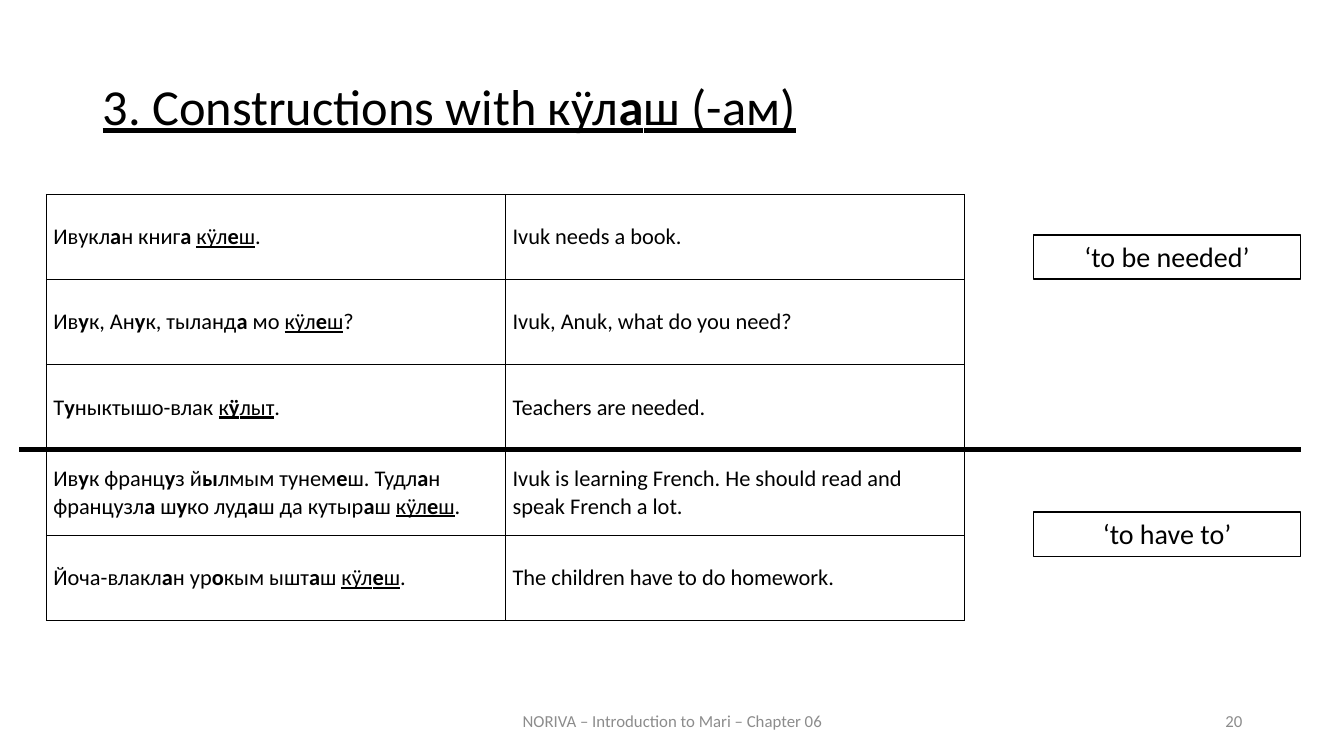
"""Build a slide on Mari constructions with кӱлаш."""
from dataclasses import dataclass

from pptx import Presentation
from pptx import util as u
from pptx.dml import color
from pptx.enum import shapes, text
from pptx.oxml import ns, xmlchemy

FONT = "Calibri"
BLACK, WHITE, GREY = "000000", "FFFFFF", "8C8C8C"
TABLE_LEFT, TABLE_WIDTH, TABLE_TOP = 0.46, 9.11, 1.93
ROW_HEIGHT = 1.69 / 2
LEFT, CENTER = text.PP_ALIGN.LEFT, text.PP_ALIGN.CENTER
RIGHT, JUSTIFY = text.PP_ALIGN.RIGHT, text.PP_ALIGN.JUSTIFY


@dataclass
class ExampleTable:
    first_row: int
    align: text.PP_ALIGN
    rows: list[tuple[str, str]]


@dataclass
class Label:
    wording: str
    top: float


@dataclass
class Footer:
    wording: str
    left: float
    width: float
    align: text.PP_ALIGN


EXAMPLES = [
    ExampleTable(0, JUSTIFY, [
        ("Ивукл*а*н книг*а *_кӱл*е*ш_.", "Ivuk needs a book."),
        ("Ив*у*к, Ан*у*к, тыланд*а* мо _кӱл*е*ш_?", "Ivuk, Anuk, what do you need?"),
    ]),
    ExampleTable(2, JUSTIFY, [
        ("Т*у*ныктышо-влак _к*ӱ*лыт_.", "Teachers are needed."),
    ]),
    ExampleTable(3, LEFT, [
        ("Ив*у*к франц*у*з й*ы*лмым тунем*е*ш. Тудл*а*н французл*а *ш*у*ко "
         "луд*а*ш да кутыр*а*ш _кӱл*е*ш_.",
         "Ivuk is learning French. He should read and speak French a lot."),
        ("Йоча-влакл*а*н ур*о*кым ышт*а*ш _кӱл*е*ш_.", "The children have to do homework."),
    ]),
]
LABELS = [Label("‘to be needed’", 2.33), Label("‘to have to’", 5.08)]
FOOTERS = [
    Footer("NORIVA – Introduction to Mari – Chapter 06", 4.42, 4.5, CENTER),
    Footer("20", 9.42, 3, RIGHT),
]


def rgb(value: str) -> color.RGBColor:
    """Turn a hex string into a colour."""
    return color.RGBColor.from_string(value)


def write(frame, marked: str, *, size: float, align: text.PP_ALIGN, ink: str = BLACK):
    """Write one paragraph in which * toggles bold and _ toggles underline."""
    frame.word_wrap = True
    paragraph = frame.paragraphs[0]
    paragraph.alignment = align
    for line_index, underlined in enumerate(marked.split("_")):
        for bold_index, piece in enumerate(underlined.split("*")):
            if piece:
                run = paragraph.add_run()
                run.text = piece
                run.font.name, run.font.size = FONT, u.Pt(size)
                run.font.bold = bold_index % 2 == 1
                run.font.underline = line_index % 2 == 1
                run.font.color.rgb = rgb(ink)
    return paragraph


def add_text_box(slide, left: float, top: float, width: float, height: float):
    """Add an empty text box and return its text frame."""
    box = slide.shapes.add_textbox(*map(u.Inches, (left, top, width, height)))
    return box.text_frame


def add_title(slide) -> None:
    """Add the underlined heading."""
    frame = add_text_box(slide, 0.92, 0.76, 11.5, 5.98)
    paragraph = write(frame, "_3. Constructions with кӱл*а*ш (-ам)_", size=36, align=JUSTIFY)
    paragraph.line_spacing = 0.9
    paragraph.space_before = u.Pt(12)


def add_footer(slide, footer: Footer) -> None:
    """Add one grey text at the foot of the slide."""
    frame = add_text_box(slide, footer.left, 6.95, footer.width, 0.4)
    frame.vertical_anchor = text.MSO_ANCHOR.MIDDLE
    write(frame, footer.wording, size=12, align=footer.align, ink=GREY)


def style_cell(cell) -> None:
    """Give a cell thin black borders, no fill and narrow margins."""
    cell.vertical_anchor = text.MSO_ANCHOR.MIDDLE
    cell.margin_left = cell.margin_right = u.Inches(0.07)
    cell.margin_top = cell.margin_bottom = 0
    properties = cell._tc.get_or_add_tcPr()
    for side in "LRTB":
        border = xmlchemy.OxmlElement(f"a:ln{side}")
        border.set("w", str(u.Pt(1)))
        fill = xmlchemy.OxmlElement("a:solidFill")
        ink = xmlchemy.OxmlElement("a:srgbClr")
        ink.set("val", BLACK)
        fill.append(ink)
        border.append(fill)
        properties.append(border)
    cell.fill.background()


def add_examples(slide, examples: ExampleTable) -> None:
    """Add a table of sentences and their translations."""
    count = len(examples.rows)
    top = TABLE_TOP + examples.first_row * ROW_HEIGHT
    frame = slide.shapes.add_table(
        count, 2, u.Inches(TABLE_LEFT), u.Inches(top),
        u.Inches(TABLE_WIDTH), u.Inches(count * ROW_HEIGHT))
    table = frame.table
    table.first_row = table.horz_banding = False
    for row_index, sentences in enumerate(examples.rows):
        for column_index, sentence in enumerate(sentences):
            cell = table.cell(row_index, column_index)
            style_cell(cell)
            write(cell.text_frame, sentence, size=16, align=examples.align)


def add_divider(slide) -> None:
    """Add the thick line between the two meanings."""
    y = u.Inches(4.46)
    line = slide.shapes.add_connector(
        shapes.MSO_CONNECTOR.STRAIGHT, u.Inches(0.19), y, u.Inches(12.9), y)
    line.line.color.rgb = rgb(BLACK)
    line.line.width = u.Pt(3)
    properties = line._element.find(ns.qn("p:spPr"))
    properties.append(xmlchemy.OxmlElement("a:effectLst"))


def add_label(slide, label: Label) -> None:
    """Add a framed meaning beside the tables."""
    shape = slide.shapes.add_shape(
        shapes.MSO_SHAPE.RECTANGLE,
        *map(u.Inches, (10.25, label.top, 2.65, 0.44)))
    shape.shadow.inherit = False
    shape.fill.solid()
    shape.fill.fore_color.rgb = rgb(WHITE)
    shape.line.color.rgb = rgb(BLACK)
    shape.line.width = u.Pt(1)
    shape.text_frame.vertical_anchor = text.MSO_ANCHOR.TOP
    shape.text_frame.auto_size = text.MSO_AUTO_SIZE.SHAPE_TO_FIT_TEXT
    write(shape.text_frame, label.wording, size=20, align=CENTER)


def main() -> None:
    """Build and save the presentation."""
    presentation = Presentation()
    presentation.slide_width = u.Inches(13.33)
    presentation.slide_height = u.Inches(7.5)
    slide = presentation.slides.add_slide(presentation.slide_layouts[6])
    add_title(slide)
    for footer in FOOTERS:
        add_footer(slide, footer)
    for examples in EXAMPLES:
        add_examples(slide, examples)
    add_divider(slide)
    for label in LABELS:
        add_label(slide, label)
    presentation.save("out.pptx")


if __name__ == "__main__":
    main()
